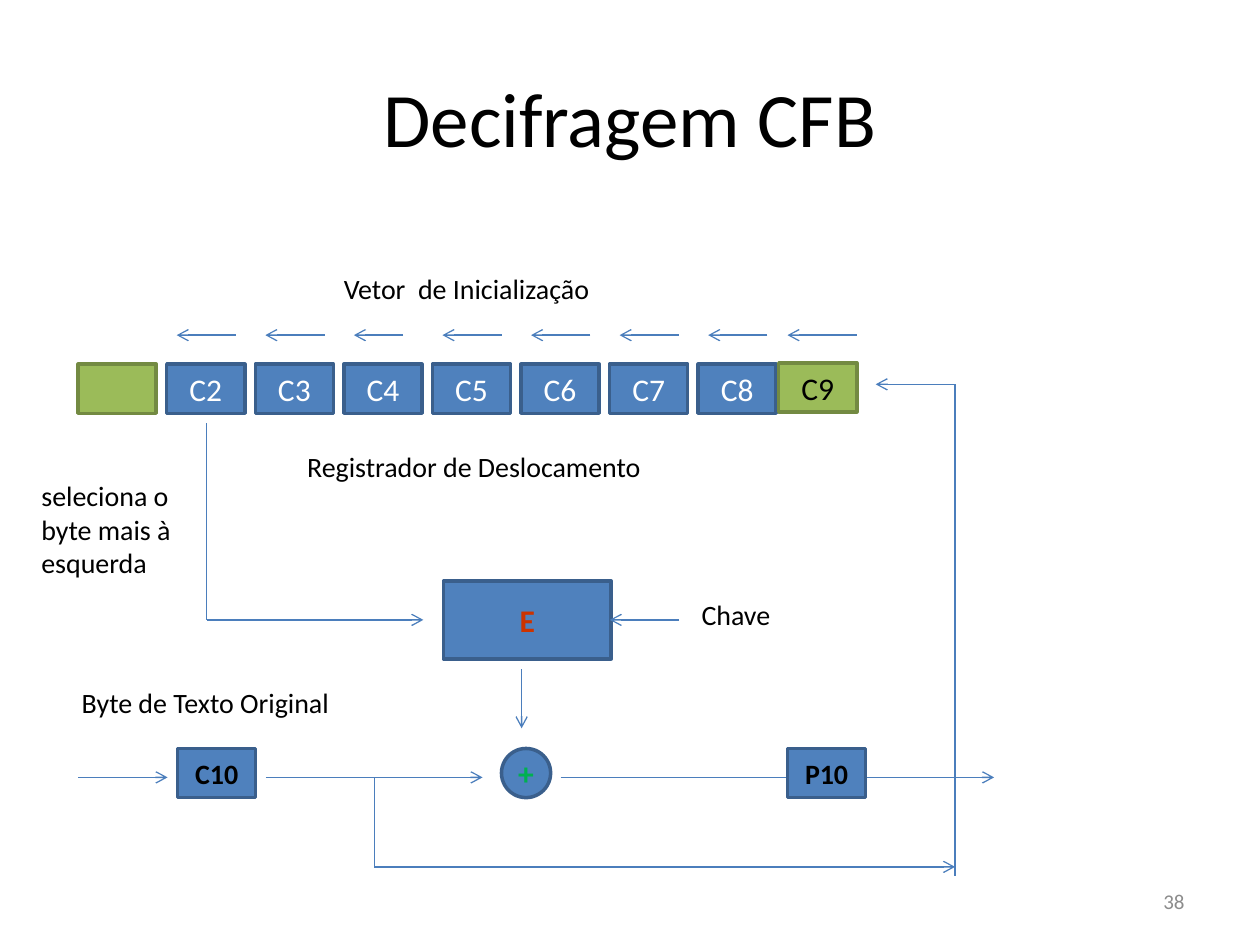
from dataclasses import dataclass
from lxml.etree import SubElement
from pptx import Presentation
from pptx.dml.color import RGBColor
from pptx.enum.shapes import MSO_CONNECTOR, MSO_SHAPE
from pptx.enum.text import MSO_ANCHOR, PP_ALIGN
from pptx.oxml.ns import qn
from pptx.util import Inches, Pt


@dataclass(frozen=True)
class Theme:
    font: str = "Calibri"
    black: str = "000000"
    white: str = "FFFFFF"
    gray: str = "8C8C8C"
    red: str = "CC3300"
    mint: str = "00B050"
    wire: str = "4B7EBC"
    blue: tuple = ("4F81BD", "3A5F8C")
    green: tuple = ("9BBB59", "738A42")
    title: int = 44
    cell: int = 18
    label: int = 16
    small: int = 12


THEME = Theme()
CELL_W, CELL_H = 0.62, 0.39


def color(code):
    return RGBColor.from_string(code)


def write(frame, text, size, ink=THEME.black, bold=False, align=PP_ALIGN.LEFT):
    para = frame.paragraphs[0]
    para.alignment = align
    run = para.add_run()
    run.text = text
    font = run.font
    font.name, font.size, font.bold = THEME.font, Pt(size), bold
    font.color.rgb = color(ink)


def label(slide, x, y, w, h, text, size=THEME.label, **style):
    frame = slide.shapes.add_textbox(Inches(x), Inches(y), Inches(w), Inches(h)).text_frame
    frame.word_wrap = True
    write(frame, text, size, **style)
    return frame


def block(slide, x, y, w, h, text="", size=THEME.cell, ink=THEME.white,
          bold=False, pair=THEME.blue, kind=MSO_SHAPE.RECTANGLE):
    shape = slide.shapes.add_shape(kind, Inches(x), Inches(y), Inches(w), Inches(h))
    shape.shadow.inherit = False
    shape.fill.solid()
    shape.fill.fore_color.rgb = color(pair[0])
    shape.line.color.rgb = color(pair[1])
    shape.line.width = Pt(2)
    if text:
        frame = shape.text_frame
        frame.word_wrap = False
        frame.vertical_anchor = MSO_ANCHOR.MIDDLE
        write(frame, text, size, ink, bold, PP_ALIGN.CENTER)


def wire(slide, *points):
    """Join the points with straight lines; the last one ends in an arrowhead."""
    for start, end in zip(points, points[1:]):
        line = slide.shapes.add_connector(
            MSO_CONNECTOR.STRAIGHT, *(Inches(v) for v in (*start, *end)))
        line.line.color.rgb = color(THEME.wire)
        line.line.width = Pt(0.75)
        props = line._element.spPr
        if end == points[-1]:
            SubElement(props.find(qn("a:ln")), qn("a:tailEnd"), type="arrow")
        SubElement(props, qn("a:effectLst"))


def heading(slide, x, y, w, h):
    title = slide.shapes.title
    title.left, title.top, title.width, title.height = (Inches(v) for v in (x, y, w, h))
    title.text_frame.vertical_anchor = MSO_ANCHOR.MIDDLE
    write(title.text_frame, "Decifragem CFB", THEME.title, align=PP_ALIGN.CENTER)


def register(slide, x, y):
    """Shift register: a row of bytes with a shift arrow above each."""
    step = 0.703
    label(slide, x + 2.01, y, 3.62, 0.4, "Vetor  de Inicialização")
    label(slide, x + 1.72, y + 1.41, 4.3, 0.37, "Registrador de Deslocamento")
    block(slide, x, y + 0.78, CELL_W, CELL_H, pair=THEME.green)
    for i in range(1, 8):
        left = x + i * step
        block(slide, left, y + 0.78, CELL_W, CELL_H, f"C{i + 1}")
        span = 0.39 if i == 3 else 0.47
        wire(slide, (left + 0.08 + span, y + 0.55), (left + 0.08, y + 0.55))
    block(slide, x + 5.56, y + 0.77, CELL_W, CELL_H, "C9", ink=THEME.black, pair=THEME.green)
    wire(slide, (x + 6.18, y + 0.55), (x + 5.63, y + 0.55))


def cipher(slide, x, y):
    """Leftmost byte and key entering the block cipher."""
    mid = y + 1.56
    label(slide, x - 1.41, y + 0.39, 1.25, 1.18, "seleciona o byte mais à esquerda")
    wire(slide, (x, y), (x, mid), (x + 1.72, mid))
    block(slide, x + 1.88, y + 1.25, 1.33, 0.62, "E", ink=THEME.red, bold=True)
    wire(slide, (x + 3.75, mid), (x + 3.2, mid))
    label(slide, x + 3.83, y + 1.33, 0.94, 0.37, "Chave")
    wire(slide, (x + 2.5, y + 1.95), (x + 2.5, y + 2.42))


def stream(slide, x, y):
    """Cipher byte in, XOR, plain byte out."""
    mid, top = y + 0.78, y + 0.55
    label(slide, x - 0.07, y, 2.73, 0.37, "Byte de Texto Original")
    for start, end in ((0, 0.71), (1.49, 3.21), (3.83, 7.27)):
        wire(slide, (x + start, mid), (x + end, mid))
    for left, text in ((0.79, "C10"), (5.63, "P10")):
        block(slide, x + left, top, CELL_W, CELL_H, text, THEME.label, THEME.black, True)
    block(slide, x + 3.36, top, CELL_H, CELL_H, "+", ink=THEME.mint, bold=True,
          kind=MSO_SHAPE.OVAL)


def feedback(slide, x, y):
    """Cipher byte returning to the right end of the register."""
    right, low = x + 4.61, y + 3.83
    wire(slide, (x, y + 3.12), (x, low), (right, low))
    wire(slide, (right, y + 3.9), (right, y), (x + 3.98, y))


def main():
    deck = Presentation()
    deck.slide_width, deck.slide_height = Inches(10), Inches(7.5)
    slide = deck.slides.add_slide(deck.slide_layouts[5])
    heading(slide, 0.5, 0.3, 9, 1.25)
    register(slide, 0.62, 2.11)
    cipher(slide, 1.64, 3.36)
    stream(slide, 0.62, 5.39)
    feedback(slide, 2.97, 3.05)
    number = label(slide, 7.17, 6.95, 2.33, 0.4, "38", THEME.small,
                   ink=THEME.gray, align=PP_ALIGN.RIGHT)
    number.vertical_anchor = MSO_ANCHOR.MIDDLE
    deck.save("out.pptx")


if __name__ == "__main__":
    main()
